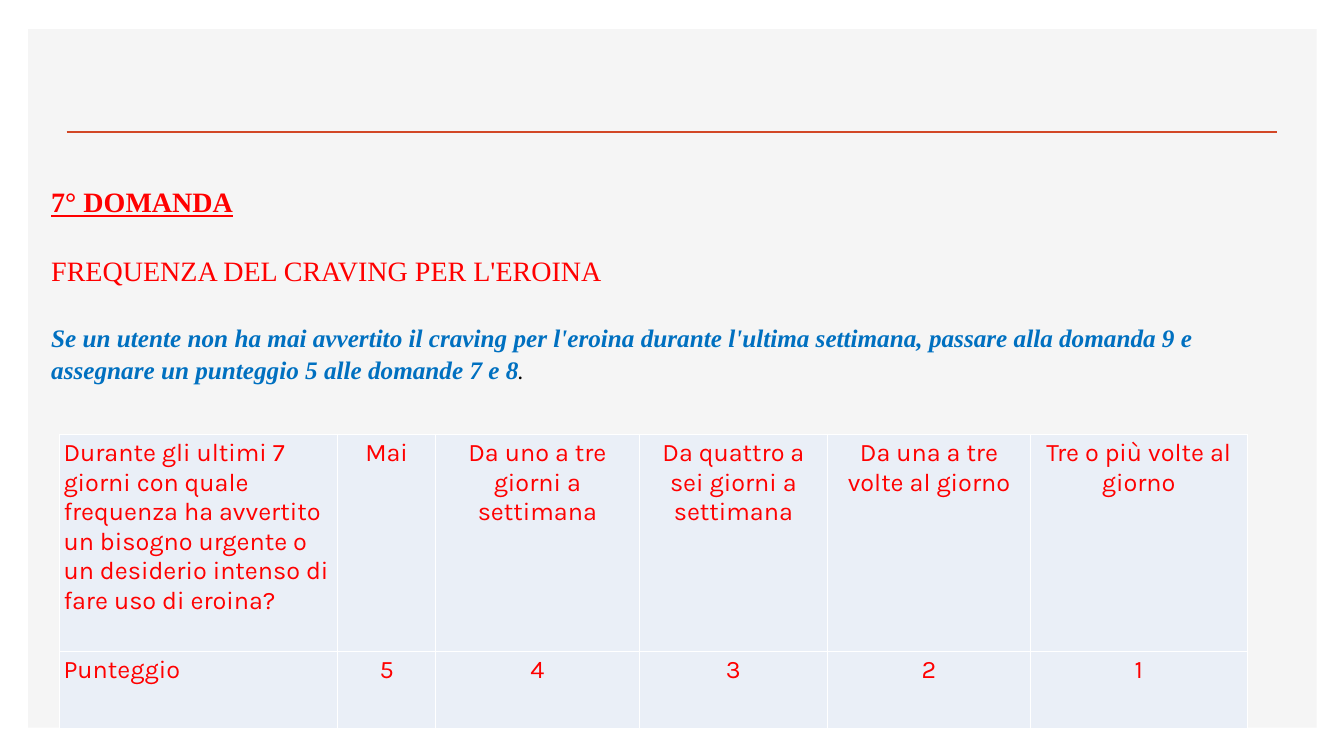
import pptx
import pptx.util
import pptx.dml.color
import pptx.enum.shapes
import pptx.enum.text
import pptx.oxml
import pptx.oxml.ns
from pptx.util import Inches

COLORS = {"panel": "F5F5F5", "rule": "D24726", "cell": "EAEFF7", "border": "FFFFFF",
          "red": "FF0000", "blue": "0070C0", "black": "000000"}
SERIF, SANS = "Times New Roman", "Karla"
ALIGN = pptx.enum.text.PP_ALIGN

COLUMN_WIDTHS = [2.76, 0.97, 2.02, 1.87, 2.01, 2.15]
ROW_HEIGHTS = [2.15, 0.77]
ANSWERS = [
    ["Durante gli ultimi 7 giorni con quale frequenza ha avvertito un bisogno "
     "urgente o un desiderio intenso di fare uso di eroina?",
     "Mai", "Da uno a tre giorni a settimana", "Da quattro a sei giorni a settimana",
     "Da una a tre volte al giorno", "Tre o più volte al giorno"],
    ["Punteggio", "5", "4", "3", "2", "1"],
]
QUESTION = [
    [("7° DOMANDA", 20, "red", {"bold": True, "underline": True})],
    [("FREQUENZA DEL CRAVING PER L'EROINA", 20, "red", {})],
    [("Se un utente non ha mai avvertito il craving per l'eroina durante l'ultima "
      "settimana, passare alla domanda 9 e assegnare un punteggio 5 alle domande 7 e 8",
      18, "blue", {"bold": True, "italic": True}),
     (".", 12, "black", {"bold": True, "italic": True})],
]


def rgb(name):
    return pptx.dml.color.RGBColor.from_string(COLORS[name])


class SlideBuilder:
    def __init__(self, page):
        self.page = page

    def panel(self, left, top, width, height):
        panel = self.page.shapes.add_shape(
            pptx.enum.shapes.MSO_SHAPE.RECTANGLE,
            Inches(left), Inches(top), Inches(width), Inches(height))
        panel.shadow.inherit = False
        panel.fill.solid()
        panel.fill.fore_color.rgb = rgb("panel")
        panel.line.fill.background()

    def rule(self, left, right, y):
        rule = self.page.shapes.add_connector(
            pptx.enum.shapes.MSO_CONNECTOR.STRAIGHT,
            Inches(left), Inches(y), Inches(right), Inches(y))
        rule.line.color.rgb = rgb("rule")
        rule.line.width = pptx.util.Pt(2)
        properties = rule._element.spPr
        properties.append(pptx.oxml.parse_xml(
            f"<a:effectLst {pptx.oxml.ns.nsdecls('a')}/>"))

    def span(self, para, text, size, color, font, **style):
        span = para.add_run()
        span.text = text
        span.font.size = pptx.util.Pt(size)
        span.font.name = font
        span.font.color.rgb = rgb(color)
        for name, value in style.items():
            setattr(span.font, name, value)

    def text(self, left, top, width, height, paragraphs):
        box = self.page.shapes.add_textbox(
            Inches(left), Inches(top), Inches(width), Inches(height))
        frame = box.text_frame
        frame.word_wrap = True
        frame.vertical_anchor = pptx.enum.text.MSO_ANCHOR.MIDDLE
        for index, spans in enumerate(paragraphs):
            para = frame.add_paragraph() if index else frame.paragraphs[0]
            para.line_spacing = 1.05
            para.space_before = pptx.util.Pt(24 if index else 0)
            for text, size, color, style in spans:
                self.span(para, text, size, color, SERIF, **style)

    def table(self, left, top, widths, heights, rows):
        table = self.page.shapes.add_table(
            len(heights), len(widths), Inches(left), Inches(top),
            Inches(sum(widths)), Inches(sum(heights))).table
        for column, width in zip(table.columns, widths):
            column.width = Inches(width)
        for row, height, texts in zip(table.rows, heights, rows):
            row.height = Inches(height)
            for index, (cell, text) in enumerate(zip(row.cells, texts)):
                self.cell(cell, text, ALIGN.CENTER if index else ALIGN.LEFT)

    def cell(self, cell, text, alignment):
        cell.margin_left = cell.margin_right = Inches(0.04)
        cell.margin_top = cell.margin_bottom = Inches(0.04)
        para = cell.text_frame.paragraphs[0]
        para.alignment = alignment
        self.span(para, text, 18, "red", SANS, bold=False)
        properties = cell._tc.get_or_add_tcPr()
        for side in ("lnL", "lnR", "lnT", "lnB"):
            properties.append(pptx.oxml.parse_xml(
                f'<a:{side} {pptx.oxml.ns.nsdecls("a")} w="{pptx.util.Pt(1)}"><a:solidFill>'
                f'<a:srgbClr val="{COLORS["border"]}"/></a:solidFill></a:{side}>'))
        cell.fill.solid()
        cell.fill.fore_color.rgb = rgb("cell")


def main():
    deck = pptx.Presentation()
    deck.slide_width, deck.slide_height = Inches(13.33), Inches(7.5)
    builder = SlideBuilder(deck.slides.add_slide(deck.slide_layouts[6]))
    builder.panel(0.28, 0.29, 12.78, 6.93)
    builder.rule(0.66, 12.67, 1.31)
    builder.table(0.59, 4.31, COLUMN_WIDTHS, ROW_HEIGHTS, ANSWERS)
    builder.text(0.41, 1.79, 11.96, 2.05, QUESTION)
    deck.save("out.pptx")


if __name__ == "__main__":
    main()
